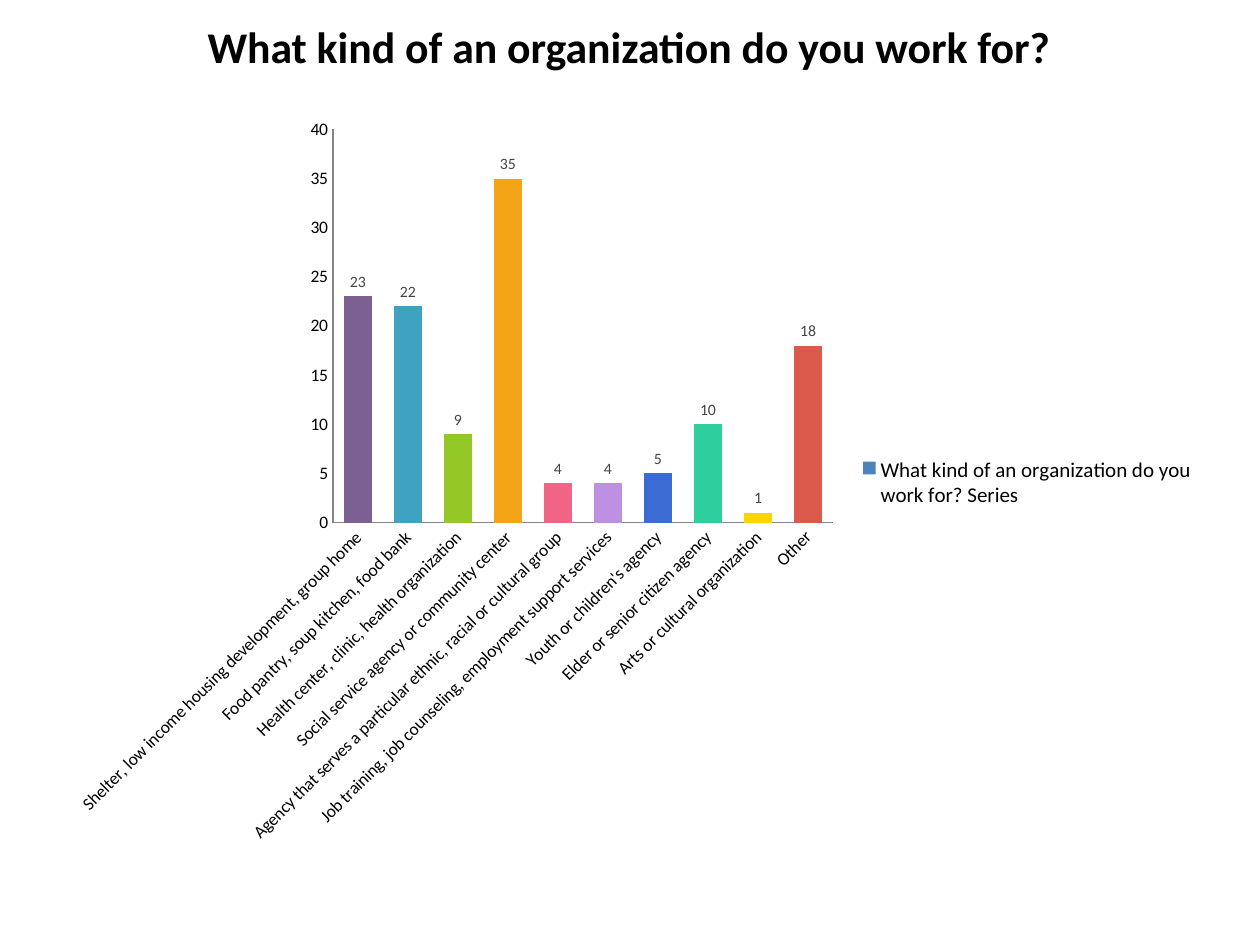
from pptx import Presentation
from pptx import util as u
from pptx.chart import data
from pptx.dml.color import RGBColor
from pptx.enum import chart as ch, text

BLACK = RGBColor(0, 0, 0)
GRAY = RGBColor(0x44, 0x44, 0x44)
LINE = RGBColor(0x86, 0x86, 0x86)
BLUE = RGBColor(0x4F, 0x81, 0xBD)
PURPLE = RGBColor(0x7C, 0x60, 0x93)
TEAL = RGBColor(0x40, 0xA2, 0xC1)
GREEN = RGBColor(0x94, 0xC8, 0x26)
ORANGE = RGBColor(0xF5, 0xA4, 0x17)
PINK = RGBColor(0xF0, 0x65, 0x86)
LILAC = RGBColor(0xBE, 0x90, 0xE1)
ROYAL = RGBColor(0x3A, 0x6C, 0xD4)
MINT = RGBColor(0x2E, 0xCF, 0x9F)
YELLOW = RGBColor(0xFC, 0xD5, 0x00)
RED = RGBColor(0xDB, 0x5A, 0x4C)

TITLE = "What kind of an organization do you work for?"
GROUPS = [
    (" Shelter, low income housing development, group home", 23, PURPLE),
    (" Food pantry, soup kitchen, food bank", 22, TEAL),
    (" Health center, clinic, health organization", 9, GREEN),
    (" Social service agency or community center", 35, ORANGE),
    (" Agency that serves a particular ethnic, racial or cultural group", 4, PINK),
    (" Job training, job counseling, employment support services", 4, LILAC),
    (" Youth or children's agency", 5, ROYAL),
    (" Elder or senior citizen agency", 10, MINT),
    (" Arts or cultural organization", 1, YELLOW),
    (" Other", 18, RED),
]


class Deck:
    face = "Calibri"

    def __init__(self, wide, high):
        self.prs = Presentation()
        self.prs.slide_width = u.Inches(wide)
        self.prs.slide_height = u.Inches(high)
        self.slide = self.prs.slides.add_slide(self.prs.slide_layouts[5])

    def style(self, font, size, color=BLACK, bold=False):
        font.name = self.face
        font.size = u.Pt(size)
        font.bold = bold
        font.color.rgb = color

    def title(self, words, *box):
        shape = self.slide.shapes.title
        shape.left, shape.top, shape.width, shape.height = map(u.Inches, box)
        frame = shape.text_frame
        frame.text = words
        frame.word_wrap = True
        frame.auto_size = text.MSO_AUTO_SIZE.NONE
        frame.vertical_anchor = text.MSO_ANCHOR.TOP
        para = frame.paragraphs[0]
        para.alignment = text.PP_ALIGN.CENTER
        self.style(para.font, 25, bold=True)

    def axis(self, axis):
        axis.has_major_gridlines = False
        axis.major_tick_mark = axis.minor_tick_mark = ch.XL_TICK_MARK.NONE
        axis.format.line.color.rgb = LINE
        self.style(axis.tick_labels.font, 10)

    def columns(self, name, rows, *box):
        names, values, colors = zip(*rows)
        source = data.CategoryChartData()
        source.categories = names
        source.add_series(name, values)
        chart = self.slide.shapes.add_chart(
            ch.XL_CHART_TYPE.COLUMN_CLUSTERED, *map(u.Inches, box), source).chart
        self.style(chart.font, 10)
        chart.has_title = False
        chart.has_legend = True
        chart.legend.position = ch.XL_LEGEND_POSITION.RIGHT
        chart.legend.include_in_layout = False
        self.style(chart.legend.font, 12)

        self.axis(chart.category_axis)
        self.axis(chart.value_axis)
        chart.category_axis._element.txPr.bodyPr.set("rot", "-2700000")
        scale = chart.value_axis
        scale.minimum_scale, scale.maximum_scale, scale.major_unit = 0, 40, 5

        plot = chart.plots[0]
        plot.gap_width = 75
        plot.vary_by_categories = False
        series = plot.series[0]
        series.format.fill.solid()
        series.format.fill.fore_color.rgb = BLUE
        for spot, color in enumerate(colors):
            fill = series.points[spot].format.fill
            fill.solid()
            fill.fore_color.rgb = color
        labels = series.data_labels
        labels.show_value = True
        labels.position = ch.XL_LABEL_POSITION.OUTSIDE_END
        self.style(labels.font, 9, GRAY)


def main():
    deck = Deck(10, 7.5)
    deck.title(TITLE, 0.14, 0.11, 9.7, 0.52)
    deck.columns(TITLE + " Series", GROUPS, 0.42, 0.83, 9.17, 6)
    deck.prs.save("out.pptx")


if __name__ == "__main__":
    main()
